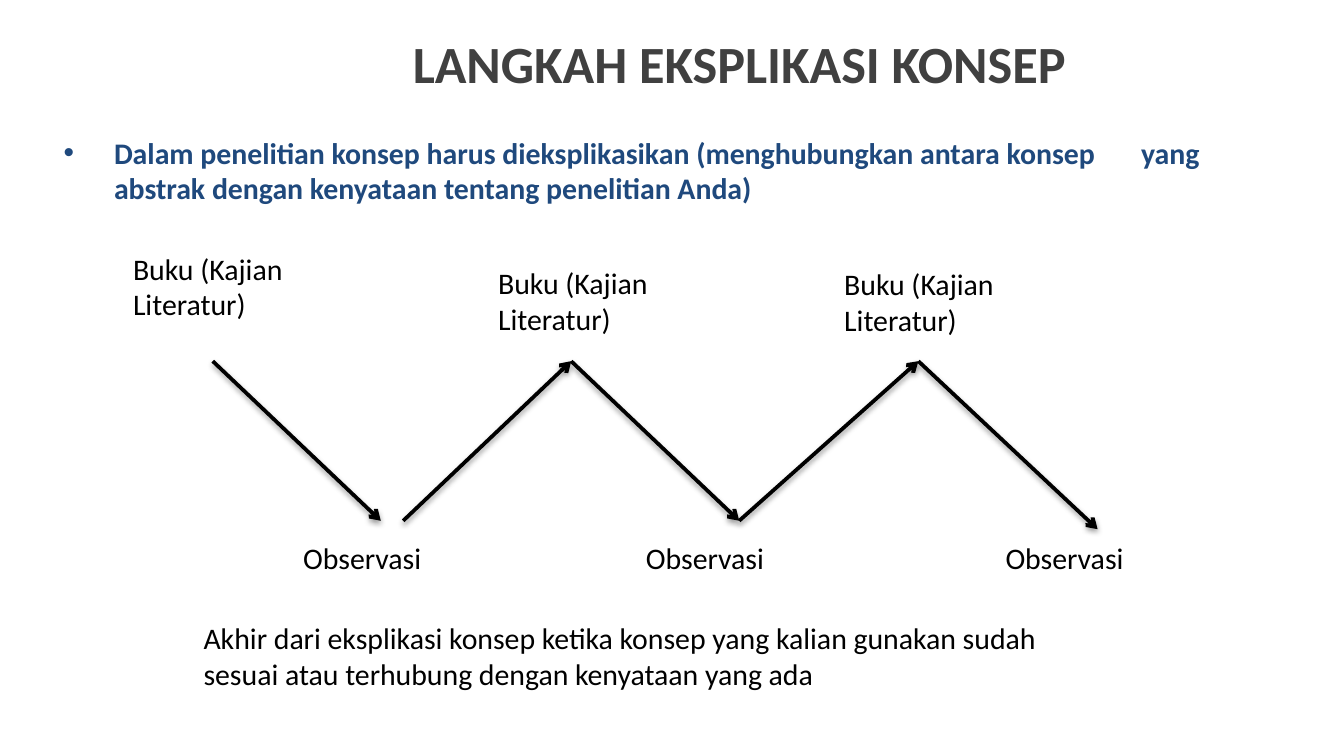
from dataclasses import dataclass

from lxml import etree
from pptx import Presentation
from pptx.dml.color import RGBColor
from pptx.enum.shapes import MSO_CONNECTOR
from pptx.enum.text import MSO_ANCHOR, MSO_AUTO_SIZE, PP_ALIGN
from pptx.oxml.ns import qn
from pptx.util import Inches, Pt

STRAIGHT = MSO_CONNECTOR.STRAIGHT
MIDDLE, TOP = MSO_ANCHOR.MIDDLE, MSO_ANCHOR.TOP
CENTER, LEFT = PP_ALIGN.CENTER, PP_ALIGN.LEFT
GROW, FIXED = MSO_AUTO_SIZE.SHAPE_TO_FIT_TEXT, MSO_AUTO_SIZE.NONE

WIDE, HIGH = Inches(10), Inches(5.625)
COLS, ROWS = 120, 90


@dataclass(frozen=True)
class Theme:
    """Colours, font and type sizes."""
    font: str = "Calibri"
    ink: str = "000000"
    gray: str = "404040"
    blue: str = "1F497D"
    head: int = 28
    body: int = 16
    line: int = 2


THEME = Theme()


def col(n):
    """Return the length of n grid columns."""
    return round(WIDE * n / COLS)


def row(n):
    """Return the length of n grid rows."""
    return round(HIGH * n / ROWS)


def add_node(parent, tag, **attrs):
    """Append an XML child with attributes."""
    node = etree.SubElement(parent, qn(tag))
    for key, value in attrs.items():
        node.set(key, str(value))
    return node


def add_text(slide, text, box, color=THEME.ink, size=THEME.body,
             bold=False, align=LEFT, anchor=TOP, fit=GROW):
    """Add a wrapped text box and return its frame."""
    x, y, w, h = box
    frame = slide.shapes.add_textbox(col(x), row(y), col(w), row(h)).text_frame
    frame.text = text
    frame.word_wrap = True
    frame.auto_size = fit
    frame.vertical_anchor = anchor
    for para in frame.paragraphs:
        para.alignment = align
        for run in para.runs:
            run.font.name = THEME.font
            run.font.size = Pt(size)
            run.font.bold = bold
            run.font.color.rgb = RGBColor.from_string(color)
    return frame


def add_bullet(para, indent, stop):
    """Give a paragraph a hanging bullet and one tab stop."""
    props = para._p.get_or_add_pPr()
    props.set("marL", str(indent))
    props.set("indent", str(-indent))
    add_node(add_node(props, "a:spcBef"), "a:spcPct", val=20000)
    add_node(props, "a:buFont", typeface="Arial")
    add_node(props, "a:buChar", char="•")
    add_node(add_node(props, "a:tabLst"), "a:tab", pos=stop, algn="l")


def add_arrow(slide, start, end):
    """Add a shadowed line with an open arrowhead."""
    (x1, y1), (x2, y2) = start, end
    arrow = slide.shapes.add_connector(
        STRAIGHT, col(x1), row(y1), col(x2), row(y2))
    arrow.line.color.rgb = RGBColor.from_string(THEME.ink)
    arrow.line.width = Pt(THEME.line)
    props = arrow._element.spPr
    add_node(props.find(qn("a:ln")), "a:tailEnd", type="arrow")
    shade = add_node(add_node(props, "a:effectLst"), "a:outerShdw",
                     blurRad=Pt(3.1), dist=Pt(1.6), dir=90 * 60000,
                     rotWithShape=0)
    tint = add_node(shade, "a:srgbClr", val=THEME.ink)
    add_node(tint, "a:alpha", val=38000)


def add_steps(slide):
    """Draw the zigzag between books and observations."""
    high, low = 43, 62
    for x1, y1, x2, y2 in ((19, high, 34, low), (36, low, 51, high),
                           (51, high, 66, low), (66, low, 82, high),
                           (82, high, 98, low + 1)):
        add_arrow(slide, (x1, y1), (x2, y2))
    for x, y in ((10.7, 29), (43.3, 30.7), (74.2, 30.9)):
        add_text(slide, "Buku (Kajian Literatur)", (x, y, 19, 10.2))
    for x, y in ((25.9, 63.5), (56.5, 63.4), (88.6, 63.4)):
        add_text(slide, "Observasi", (x, y, 19, 5.9))


def main():
    """Build and save the slide."""
    deck = Presentation()
    deck.slide_width, deck.slide_height = WIDE, HIGH
    slide = deck.slides.add_slide(deck.slide_layouts[6])
    intro = add_text(
        slide,
        "Dalam penelitian konsep harus dieksplikasikan (menghubungkan antara "
        "konsep\tyang abstrak dengan kenyataan tentang penelitian Anda)",
        (4.5, 15.2, 108, 63.4), THEME.blue, bold=True, fit=FIXED)
    add_bullet(intro.paragraphs[0], col(4.5), col(96.2))
    add_text(slide, "LANGKAH EKSPLIKASI KONSEP", (15, 0, 102, 15),
             THEME.gray, THEME.head, True, CENTER, MIDDLE, FIXED)
    add_steps(slide)
    add_text(
        slide,
        "Akhir dari eksplikasi konsep ketika konsep yang kalian gunakan sudah\n"
        "sesuai atau terhubung dengan kenyataan yang ada",
        (17, 73, 89, 10.2))
    deck.save("out.pptx")


if __name__ == "__main__":
    main()
